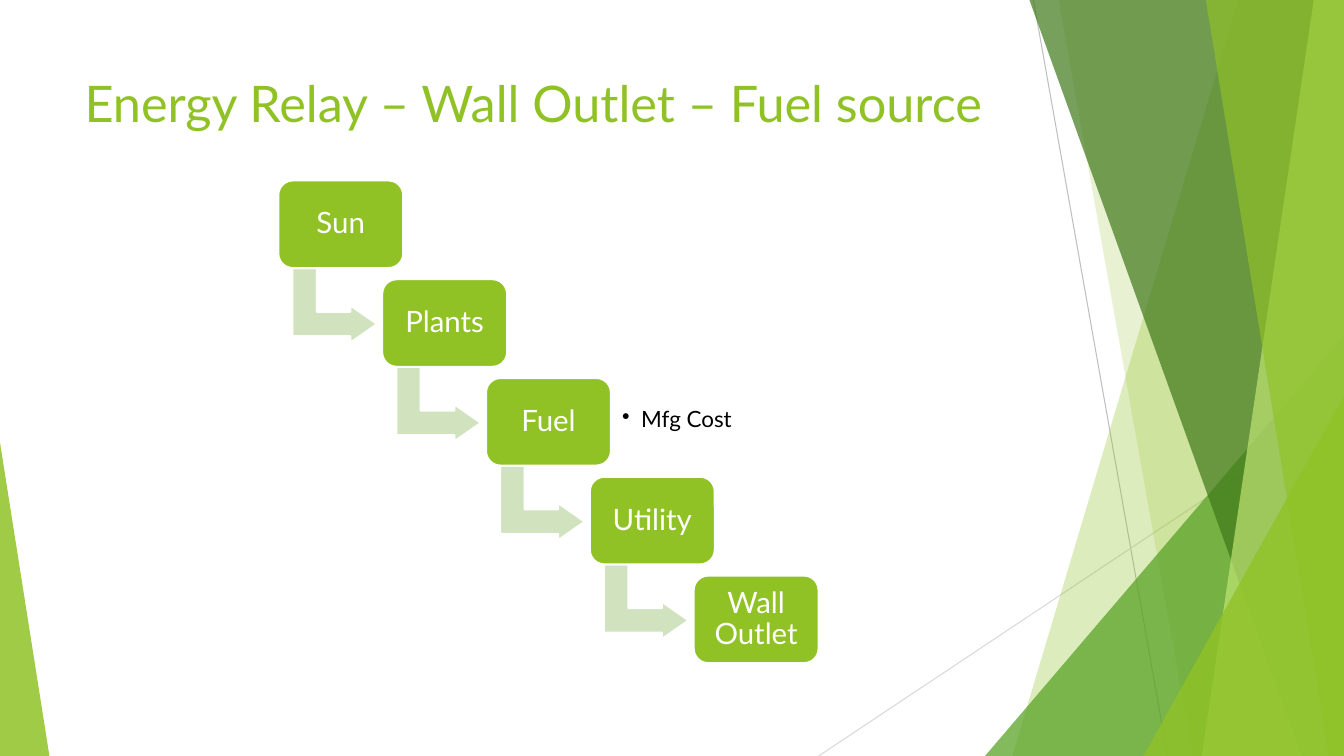
import dataclasses

import lxml.etree
import pptx
import pptx.dml.color
import pptx.enum.shapes
import pptx.enum.text
import pptx.oxml.ns
import pptx.util

SCALE = 9144
SHAPES = pptx.enum.shapes.MSO_SHAPE
ALIGN = pptx.enum.text.PP_ALIGN
ANCHOR = pptx.enum.text.MSO_ANCHOR


@dataclasses.dataclass(frozen=True)
class Theme:
    font: str = "Lato"
    lime: str = "90C226"
    green: str = "54A021"
    forest: str = "3F7819"
    pale: str = "C0E474"
    arrow: str = "D1E3BE"
    white: str = "FFFFFF"
    black: str = "000000"
    dark_hairline: str = "BFBFBF"
    light_hairline: str = "D9D9D9"
    title_size: int = 36
    step_size: int = 21
    note_size: int = 16
    hairline: float = 0.75
    outline: float = 1.5


THEME = Theme()


def px(*lengths):
    return [pptx.util.Emu(length * SCALE) for length in lengths]


def rgb(color):
    return pptx.dml.color.RGBColor.from_string(color)


def set_values(target, values):
    for name, value in values.items():
        setattr(target, name, value)


def paint(shape, color, opacity=100, outline=None):
    shape.shadow.inherit = False
    shape.fill.solid()
    shape.fill.fore_color.rgb = rgb(color)
    if opacity < 100:
        tint = shape.fill._xPr.find(".//" + pptx.oxml.ns.qn("a:srgbClr"))
        lxml.etree.SubElement(tint, pptx.oxml.ns.qn("a:alpha"), val=str(opacity * 1000))
    if outline:
        shape.line.color.rgb = rgb(outline)
        shape.line.width = pptx.util.Pt(THEME.outline)
    else:
        shape.line.fill.background()


def write(shape, wording, size, color, inset=9, **formats):
    frame = shape.text_frame
    margins = ("margin_left", "margin_top", "margin_right", "margin_bottom")
    set_values(frame, dict.fromkeys(margins, px(inset)[0]))
    set_values(frame, {"word_wrap": True, "vertical_anchor": formats.pop("anchor", ANCHOR.MIDDLE)})
    paragraph = frame.paragraphs[0]
    set_values(paragraph, formats)
    run = paragraph.add_run()
    run.text = wording
    set_values(run.font, {"name": THEME.font, "size": pptx.util.Pt(size)})
    run.font.color.rgb = rgb(color)
    return paragraph


def add_hairline(slide, start, end, color):
    hairline = slide.shapes.add_connector(
        pptx.enum.shapes.MSO_CONNECTOR.STRAIGHT, *px(*start, *end))
    hairline.line.color.rgb = rgb(color)
    hairline.line.width = pptx.util.Pt(THEME.hairline)
    lxml.etree.SubElement(hairline._element.spPr, pptx.oxml.ns.qn("a:effectLst"))


def add_facet(slide, box, top_x, bottom_x, color, opacity):
    left, top, width, height = box
    builder = slide.shapes.build_freeform(top_x, 0, scale=SCALE)
    builder.add_line_segments([(width, 0), (width, height), (bottom_x, height)], close=True)
    paint(builder.convert_to_shape(*px(left, top)), color, opacity)


def add_corner(slide, box, apex, color, opacity):
    corner = slide.shapes.add_shape(SHAPES.ISOSCELES_TRIANGLE, *px(*box))
    corner.adjustments[0] = apex
    paint(corner, color, opacity)


def add_right_facets(slide, box):
    left, top, width, height = box
    right, bottom = left + width, top + height

    def add_right_corner(corner_width, corner_height, color, opacity):
        corner_box = (right - corner_width, bottom - corner_height, corner_width, corner_height)
        add_corner(slide, corner_box, 1, color, opacity)

    add_hairline(slide, (left + 225, top), (left + 358, bottom), THEME.dark_hairline)
    add_hairline(slide, (right, top + 403), (left + 12, bottom), THEME.light_hairline)
    add_facet(slide, box, 428, 204, THEME.lime, 30)
    add_facet(slide, box, 250, 383, THEME.lime, 20)
    add_right_corner(356, 417, THEME.green, 72)
    for facet in (
        (221, 491, THEME.forest, 70),
        (503, 392, THEME.pale, 70),
        (396, 518, THEME.lime, 65),
    ):
        add_facet(slide, box, *facet)
    add_right_corner(199, 357, THEME.lime, 80)


def add_title(slide, box):
    title = slide.shapes.add_textbox(*px(*box))
    write(title, "Energy Relay – Wall Outlet – Fuel source", THEME.title_size, THEME.lime,
          inset=5, anchor=ANCHOR.TOP)
    title.text_frame.margin_left = title.text_frame.margin_right = px(10)[0]


def add_step(slide, box, label):
    step = slide.shapes.add_shape(SHAPES.ROUNDED_RECTANGLE, *px(*box))
    step.adjustments[0] = 0.167
    paint(step, THEME.lime, outline=THEME.white)
    write(step, label, THEME.step_size, THEME.white, alignment=ALIGN.CENTER, line_spacing=0.9)


def add_step_arrow(slide, box):
    left, top, _, _ = box
    arrow = slide.shapes.add_shape(SHAPES.BENT_UP_ARROW, *px(left + 19, top + 82, 74, 84))
    arrow.rotation = 90
    for index, ratio in enumerate((0.328, 0.25, 0.358)):
        arrow.adjustments[index] = ratio
    paint(arrow, THEME.arrow, outline=THEME.white)


def add_step_note(slide, box, wording):
    left, top, width, _ = box
    note = slide.shapes.add_textbox(*px(left + width + 2, top + 7, 170, 70))
    paragraph = write(note, wording, THEME.note_size, THEME.black, line_spacing=0.9)
    properties = paragraph._p.get_or_add_pPr()
    indent = px(19)[0]
    properties.set("marL", str(indent))
    properties.set("indent", str(-indent))
    lxml.etree.SubElement(properties, pptx.oxml.ns.qn("a:buChar"), char="•")


def add_relay(slide, box):
    left, top, width, height = box
    labels = ("Sun", "Plants", "Fuel", "Utility", "Wall Outlet")
    notes = {"Fuel": "Mfg Cost"}
    step_width, step_height = 124, 87
    last = len(labels) - 1
    across, down = (width - step_width) // last, (height - step_height) // last
    for index, label in enumerate(labels):
        step_box = (left + index * across, top + index * down, step_width, step_height)
        if index < last:
            add_step_arrow(slide, step_box)
        add_step(slide, step_box, label)
        if label in notes:
            add_step_note(slide, step_box, notes[label])


def main():
    deck = pptx.Presentation()
    deck.slide_width, deck.slide_height = px(1333, 750)
    slide = deck.slides.add_slide(deck.slide_layouts[6])
    add_right_facets(slide, (800, 0, 533, 750))
    add_corner(slide, (0, 439, 49, 311), 0, THEME.lime, 85)
    add_title(slide, (74, 67, 940, 144))
    add_relay(slide, (276, 179, 536, 479))
    deck.save("out.pptx")


if __name__ == "__main__":
    main()
